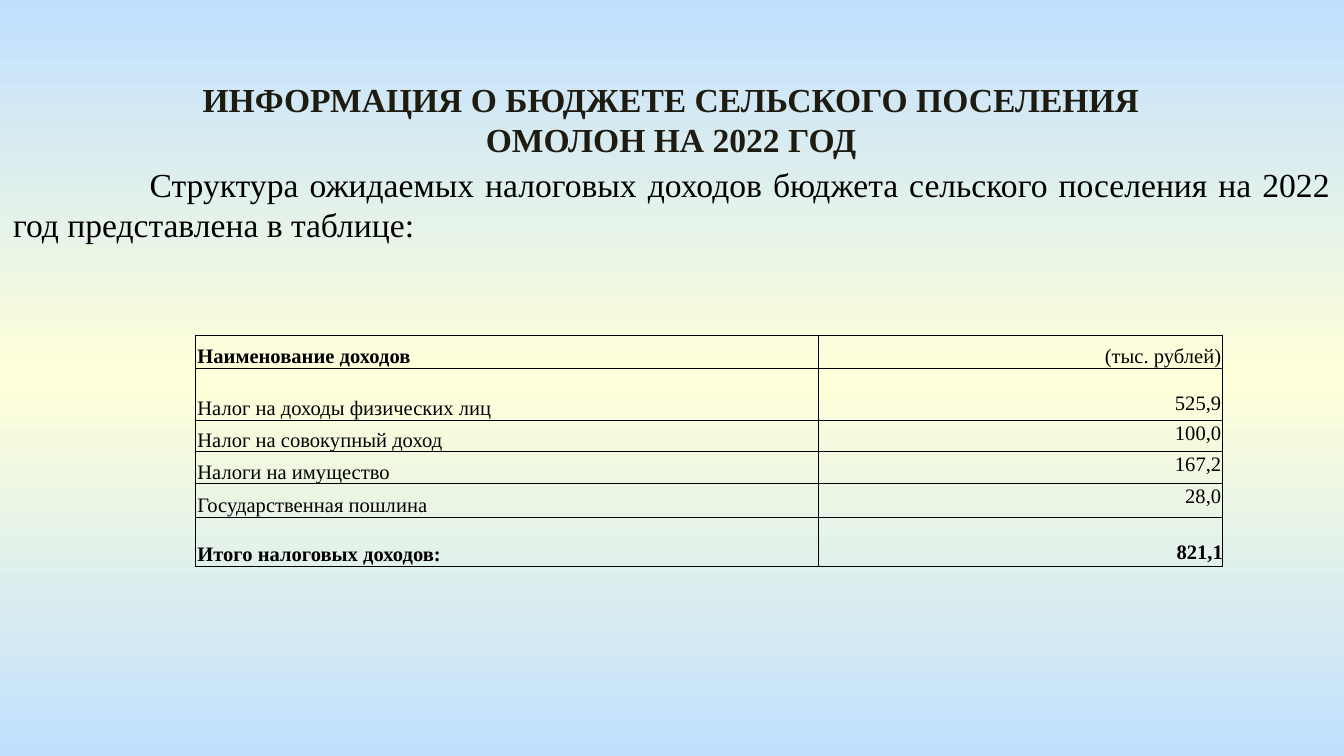
from copy import deepcopy

from lxml import etree
from pptx import Presentation
from pptx.dml.color import RGBColor
from pptx.enum import text
from pptx.oxml import ns
from pptx.util import Cm, Pt

TITLE = "ИНФОРМАЦИЯ О БЮДЖЕТЕ СЕЛЬСКОГО ПОСЕЛЕНИЯ ОМОЛОН НА 2022 ГОД"
INTRO = ("Структура ожидаемых налоговых доходов бюджета сельского поселения "
         "на 2022 год представлена в таблице:")

# Income name, amount, row height in cm
INCOMES = [
    ("Наименование доходов", "(тыс. рублей)", 0.62),
    ("Налог на доходы физических лиц", "525,9", 0.98),
    ("Налог на совокупный доход", "100,0", 0.6),
    ("Налоги на имущество", "167,2", 0.6),
    ("Государственная пошлина", "28,0", 0.64),
    ("Итого налоговых доходов:", "821,1", 0.92),
]
COLUMN_WIDTHS = [11.76, 7.65]
TALL_ROW = 0.9
LINE_HEIGHT = 0.45
CELL_INSET = 0.03

COLORS = {"title": "1E1C11", "ink": "000000", "sky": "C1E0FF", "cream": "FFFFD9"}
FONT = "Times New Roman"
ALIGN = text.PP_ALIGN
ANCHOR = text.MSO_ANCHOR


def write(frame, words, size=11, bold=False, color="ink", align=ALIGN.JUSTIFY, indent=0):
    paragraph = frame.paragraphs[0]
    paragraph.alignment = align
    if indent:
        paragraph._p.get_or_add_pPr().set("indent", str(Cm(indent)))
    run = paragraph.add_run()
    run.text = words
    run.font.name = FONT
    run.font.size = Pt(size)
    run.font.bold = bold
    run.font.color.rgb = RGBColor.from_string(COLORS[color])


def add_text(slide, words, left, top, width, height, **style):
    frame = slide.shapes.add_textbox(Cm(left), Cm(top), Cm(width), Cm(height)).text_frame
    frame.word_wrap = True
    write(frame, words, **style)


def paint_background(slide):
    fill = slide.background.fill
    fill.gradient()
    fill.gradient_angle = 270
    first_stop = slide.element.find(".//" + ns.qn("a:gs"))
    first_stop.addnext(deepcopy(first_stop))
    for stop, color, position in zip(fill.gradient_stops, ("sky", "cream", "sky"), (0, 0.5, 1)):
        stop.color.rgb = RGBColor.from_string(COLORS[color])
        stop.position = position


def add_borders(cell):
    properties = cell._tc.get_or_add_tcPr()
    for place, side in enumerate(("lnL", "lnR", "lnT", "lnB")):
        line = etree.Element(ns.qn("a:" + side), w=str(Pt(0.5)))
        solid = etree.SubElement(line, ns.qn("a:solidFill"))
        etree.SubElement(solid, ns.qn("a:srgbClr"), val=COLORS["ink"])
        properties.insert(place, line)


def add_income_table(slide, left, top):
    heights = [height for _, _, height in INCOMES]
    table = slide.shapes.add_table(
        len(INCOMES), len(COLUMN_WIDTHS), Cm(left), Cm(top),
        Cm(sum(COLUMN_WIDTHS)), Cm(sum(heights))).table
    table.first_row = table.horz_banding = False
    for column, width in zip(table.columns, COLUMN_WIDTHS):
        column.width = Cm(width)

    last = len(INCOMES) - 1
    for index, (name, amount, height) in enumerate(INCOMES):
        table.rows[index].height = Cm(height)
        for column, words in enumerate((name, amount)):
            cell = table.cell(index, column)
            is_amount = column == 1 and index > 0
            cell.fill.background()
            cell.margin_left = cell.margin_right = cell.margin_top = Cm(CELL_INSET)
            cell.margin_bottom = 0
            cell.vertical_anchor = ANCHOR.TOP if is_amount else ANCHOR.BOTTOM
            if is_amount and height > TALL_ROW:
                cell.margin_top = Cm(LINE_HEIGHT)
            if is_amount and index == last:
                cell.margin_left = cell.margin_right = 0
            write(cell.text_frame, words,
                  bold=index == last or (index == 0 and column == 0),
                  align=ALIGN.RIGHT if column else ALIGN.JUSTIFY)
            add_borders(cell)


def main():
    deck = Presentation()
    deck.slide_width, deck.slide_height = Cm(25.4), Cm(14.29)
    slide = deck.slides.add_slide(deck.slide_layouts[6])
    paint_background(slide)
    add_text(slide, TITLE, 2.87, 1.37, 19.63, 1.8,
             size=18, bold=True, color="title", align=ALIGN.CENTER)
    add_text(slide, INTRO, 0, 2.97, 25.4, 1.8, size=18, indent=2.58)
    add_income_table(slide, 3.7, 6.34)
    deck.save("out.pptx")


if __name__ == "__main__":
    main()
